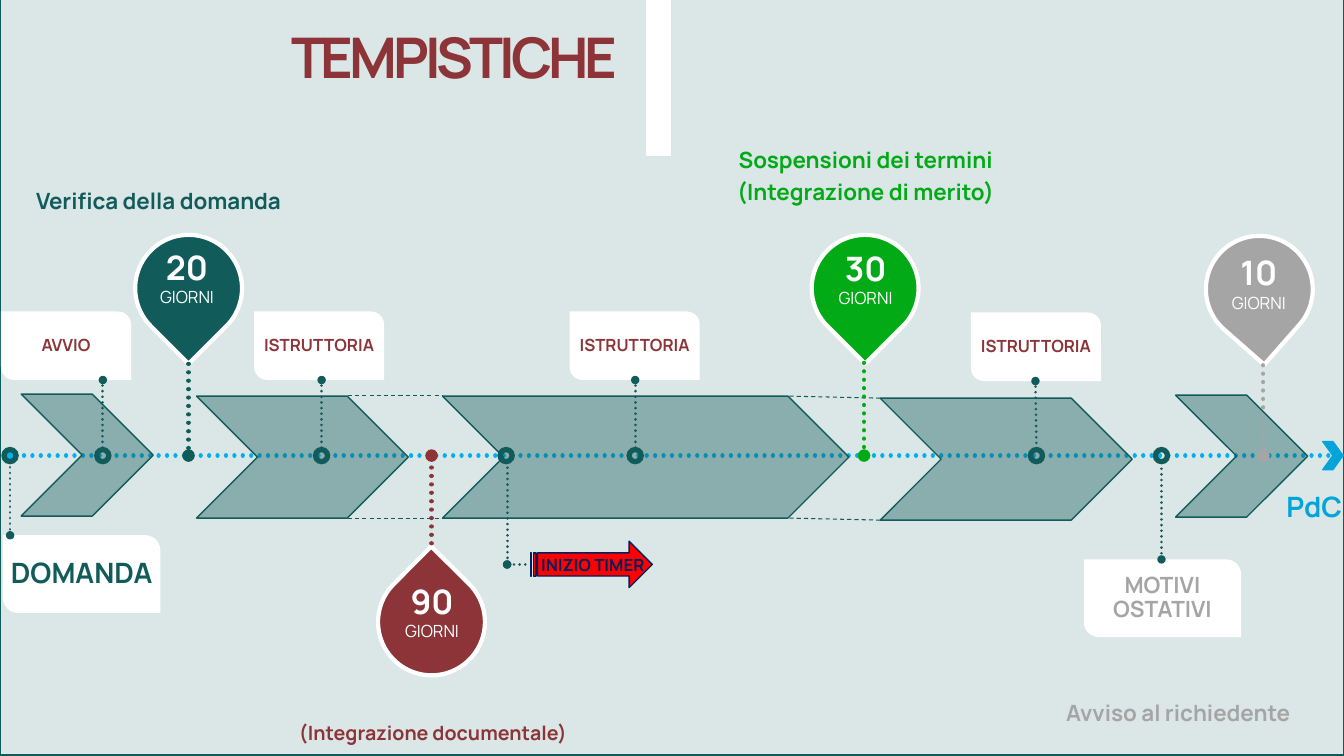
from typing import NamedTuple, Optional

from lxml.etree import SubElement
from pptx import Presentation
from pptx.dml.color import RGBColor
from pptx.enum.dml import MSO_LINE
from pptx.enum.shapes import MSO_CONNECTOR, MSO_SHAPE
from pptx.enum.text import MSO_ANCHOR, PP_ALIGN
from pptx.oxml.ns import qn
from pptx.util import Inches, Pt

FONT = "Manrope"
TEAL = "115B5A"
MAROON = "8C3438"
GREEN = "02AA16"
GREY = "A5A5A5"
WHITE = "FFFFFF"
NAVY = "002060"
CYAN = "00B0F0"
BLUE = "03A4D9"
AXIS_Y = 4.52
DONUT_SIZE = 0.16


class Box(NamedTuple):
    left: float
    top: float
    width: float
    height: float


class Pin(NamedTuple):
    days: str
    left: float
    top: float
    rotation: float
    text_left: float
    text_top: float
    stem_x: float
    stem_start: float
    color: str


class Card(NamedTuple):
    label: str
    box: Box
    size: int
    color: str


class Stroke(NamedTuple):
    start: tuple[float, float]
    end: tuple[float, float]


class Caption(NamedTuple):
    lines: list[str]
    box: Box
    size: int
    color: str
    anchor: MSO_ANCHOR = MSO_ANCHOR.MIDDLE
    align: PP_ALIGN = PP_ALIGN.CENTER
    space_before: int = 0


PINS = [
    Pin("20", 1.34, 2.33, 135, 1.4, 2.4, 1.87, 3.61, TEAL),
    Pin("90", 3.75, 5.64, 314.8, 3.83, 5.71, 4.28, 5.39, MAROON),
    Pin("10", 11.96, 2.34, 131.3, 12.03, 2.45, 12.53, 3.54, GREY),
    Pin("30", 8.05, 2.33, 135, 8.13, 2.41, 8.57, 3.6, GREEN),
]
PHASES = [
    Box(0.21, 3.91, 1.31, 1.21),
    Box(1.95, 3.93, 2.1, 1.21),
    Box(4.39, 3.93, 4.03, 1.21),
    Box(8.73, 3.95, 2.5, 1.21),
    Box(11.66, 3.92, 1.31, 1.21),
]
CARDS = [
    Card("AVVIO", Box(0.01, 3.09, 1.29, 0.68), 12, MAROON),
    Card("ISTRUTTORIA", Box(2.52, 3.09, 1.29, 0.68), 12, MAROON),
    Card("ISTRUTTORIA", Box(5.65, 3.09, 1.29, 0.68), 12, MAROON),
    Card("ISTRUTTORIA", Box(9.63, 3.1, 1.29, 0.68), 12, MAROON),
    Card("DOMANDA", Box(0.03, 5.31, 1.56, 0.77), 20, TEAL),
    Card("MOTIVI OSTATIVI", Box(10.75, 5.55, 1.56, 0.77), 16, GREY),
]
GAP_LINES = [
    Stroke((3.45, 3.92), (4.39, 3.92)),
    Stroke((3.45, 5.14), (4.39, 5.14)),
    Stroke((7.83, 3.93), (8.73, 3.95)),
    Stroke((7.83, 5.14), (8.73, 5.16)),
]
STEMS = [
    Stroke((1.02, 4.44), (1.02, 3.77)),
    Stroke((3.19, 4.44), (3.19, 3.77)),
    Stroke((6.3, 4.44), (6.3, 3.77)),
    Stroke((10.28, 4.45), (10.27, 3.78)),
    Stroke((0.1, 4.58), (0.1, 5.31)),
    Stroke((5.03, 4.64), (5.03, 5.6)),
    Stroke((5.21, 5.6), (5.03, 5.6)),
    Stroke((11.52, 4.65), (11.52, 5.55)),
]
DONUT_CENTERS = [0.1, 1.02, 3.19, 5.02, 6.3, 10.28, 11.52]
CAPTIONS = [
    Caption(["Verifica della domanda"], Box(0.26, 1.81, 2.93, 0.37), 16, TEAL,
            MSO_ANCHOR.TOP, PP_ALIGN.LEFT),
    Caption(["Sospensioni dei termini", "(Integrazione di merito)"],
            Box(7.09, 1.47, 2.99, 0.58), 16, GREEN, space_before=6),
    Caption(["(Integrazione documentale)"], Box(2.64, 7.09, 3.31, 0.39), 14, MAROON),
    Caption(["Avviso al richiedente"], Box(10.22, 6.89, 2.93, 0.39), 16, GREY),
    Caption(["PdC"], Box(12.64, 4.8, 0.79, 0.48), 20, BLUE),
    Caption(["INIZIO TIMER"], Box(5.24, 5.45, 1.28, 0.3), 12, NAVY, MSO_ANCHOR.TOP),
]


def rgb(color: str) -> RGBColor:
    return RGBColor.from_string(color)


def add_box(slide, kind: MSO_SHAPE, box: Box, fill: str, line: Optional[str] = None,
            line_width: float = 1, opacity: int = 100, rotation: float = 0):
    shape = slide.shapes.add_shape(kind, *map(Inches, box))
    shape.shadow.inherit = False
    shape.rotation = rotation
    shape.fill.solid()
    shape.fill.fore_color.rgb = rgb(fill)
    if opacity < 100:
        color = shape._element.spPr.find(qn("a:solidFill")).find(qn("a:srgbClr"))
        SubElement(color, qn("a:alpha")).set("val", str(opacity * 1000))
    if line:
        shape.line.color.rgb = rgb(line)
        shape.line.width = Pt(line_width)
    else:
        shape.line.fill.background()
    return shape


def add_stroke(slide, stroke: Stroke, color: str, width: float,
               dash: MSO_LINE = MSO_LINE.ROUND_DOT, oval: Optional[str] = "a:tailEnd") -> None:
    connector = slide.shapes.add_connector(
        MSO_CONNECTOR.STRAIGHT, *map(Inches, stroke.start + stroke.end))
    connector.line.color.rgb = rgb(color)
    connector.line.width = Pt(width)
    connector.line.dash_style = dash
    properties = connector._element.spPr
    outline = properties.find(qn("a:ln"))
    if dash == MSO_LINE.ROUND_DOT:
        outline.set("cap", "rnd")
    if oval:
        SubElement(outline, qn(oval)).set("type", "oval")
    SubElement(properties, qn("a:effectLst"))


def write_line(frame, text: str, size: int, color: str, bold: bool = True,
               align: PP_ALIGN = PP_ALIGN.CENTER, spacing=None, space_before: int = 0,
               tracking: float = 0) -> None:
    started = bool(frame.paragraphs[0].runs)
    paragraph = frame.add_paragraph() if started else frame.paragraphs[0]
    paragraph.alignment = align
    paragraph.line_spacing = spacing
    paragraph.space_before = Pt(space_before)
    run = paragraph.add_run()
    run.text = text
    run.font.name = FONT
    run.font.size = Pt(size)
    run.font.bold = bold
    run.font.color.rgb = rgb(color)
    if tracking:
        run._r.get_or_add_rPr().set("spc", str(round(tracking * 100)))


def add_frame(slide, box: Box, anchor: MSO_ANCHOR = MSO_ANCHOR.TOP):
    frame = slide.shapes.add_textbox(*map(Inches, box)).text_frame
    frame.word_wrap = True
    frame.vertical_anchor = anchor
    return frame


def add_pin(slide, pin: Pin) -> None:
    add_box(slide, MSO_SHAPE.TEAR, Box(pin.left, pin.top, 1.06, 1.06), pin.color, WHITE, 3,
            rotation=pin.rotation)
    frame = add_frame(slide, Box(pin.text_left, pin.text_top, 0.91, 0.71))
    write_line(frame, pin.days, 24, WHITE)
    write_line(frame, "GIORNI", 12, WHITE, bold=False)
    add_stroke(slide, Stroke((pin.stem_x, pin.stem_start), (pin.stem_x, AXIS_Y)), pin.color, 3)


def add_card(slide, card: Card) -> None:
    shape = add_box(slide, MSO_SHAPE.ROUND_2_DIAG_RECTANGLE, card.box, WHITE)
    shape.adjustments[0] = 0
    shape.adjustments[1] = 0.19
    frame = shape.text_frame
    frame.word_wrap = True
    frame.vertical_anchor = MSO_ANCHOR.MIDDLE
    frame.margin_left = frame.margin_right = 0
    write_line(frame, card.label, card.size, card.color, spacing=0.9)


def add_caption(slide, caption: Caption) -> None:
    frame = add_frame(slide, caption.box, caption.anchor)
    spacing = 0.9 if caption.anchor == MSO_ANCHOR.MIDDLE else None
    for line in caption.lines:
        write_line(frame, line, caption.size, caption.color, align=caption.align,
                   spacing=spacing, space_before=caption.space_before)


def main() -> None:
    presentation = Presentation()
    presentation.slide_width = Inches(13.33)
    presentation.slide_height = Inches(7.5)
    slide = presentation.slides.add_slide(presentation.slide_layouts[6])

    add_box(slide, MSO_SHAPE.RECTANGLE, Box(0, -0.01, 13.33, 7.5), TEAL, TEAL, opacity=15)
    add_stroke(slide, Stroke((0.1, AXIS_Y), (13.35, AXIS_Y)), CYAN, 3, oval="a:headEnd")
    for phase in PHASES:
        add_box(slide, MSO_SHAPE.CHEVRON, phase, TEAL, TEAL, opacity=40)
    for gap_line in GAP_LINES:
        add_stroke(slide, gap_line, TEAL, 0.75, MSO_LINE.DASH, oval=None)
    for pin in PINS:
        add_pin(slide, pin)
    add_box(slide, MSO_SHAPE.RECTANGLE, Box(6.41, 0, 0.24, 1.54), WHITE, WHITE)
    add_box(slide, MSO_SHAPE.CHEVRON, Box(13.12, 4.38, 0.2, 0.28), BLUE, BLUE)
    add_box(slide, MSO_SHAPE.STRIPED_RIGHT_ARROW, Box(5.26, 5.37, 1.21, 0.46), "FF0000", NAVY)
    for card in CARDS:
        add_card(slide, card)
    for stem in STEMS:
        add_stroke(slide, stem, TEAL, 2)
    for center in DONUT_CENTERS:
        donut = Box(center - DONUT_SIZE / 2, AXIS_Y - DONUT_SIZE / 2, DONUT_SIZE, DONUT_SIZE)
        add_box(slide, MSO_SHAPE.DONUT, donut, TEAL, TEAL)
    for caption in CAPTIONS:
        add_caption(slide, caption)
    title = add_frame(slide, Box(-1.33, -0.36, 11.67, 1.25), MSO_ANCHOR.BOTTOM)
    title.margin_bottom = 0
    write_line(title, "TEMPISTICHE", 40, MAROON, spacing=Pt(94), tracking=-2.9)
    presentation.save("out.pptx")


if __name__ == "__main__":
    main()
